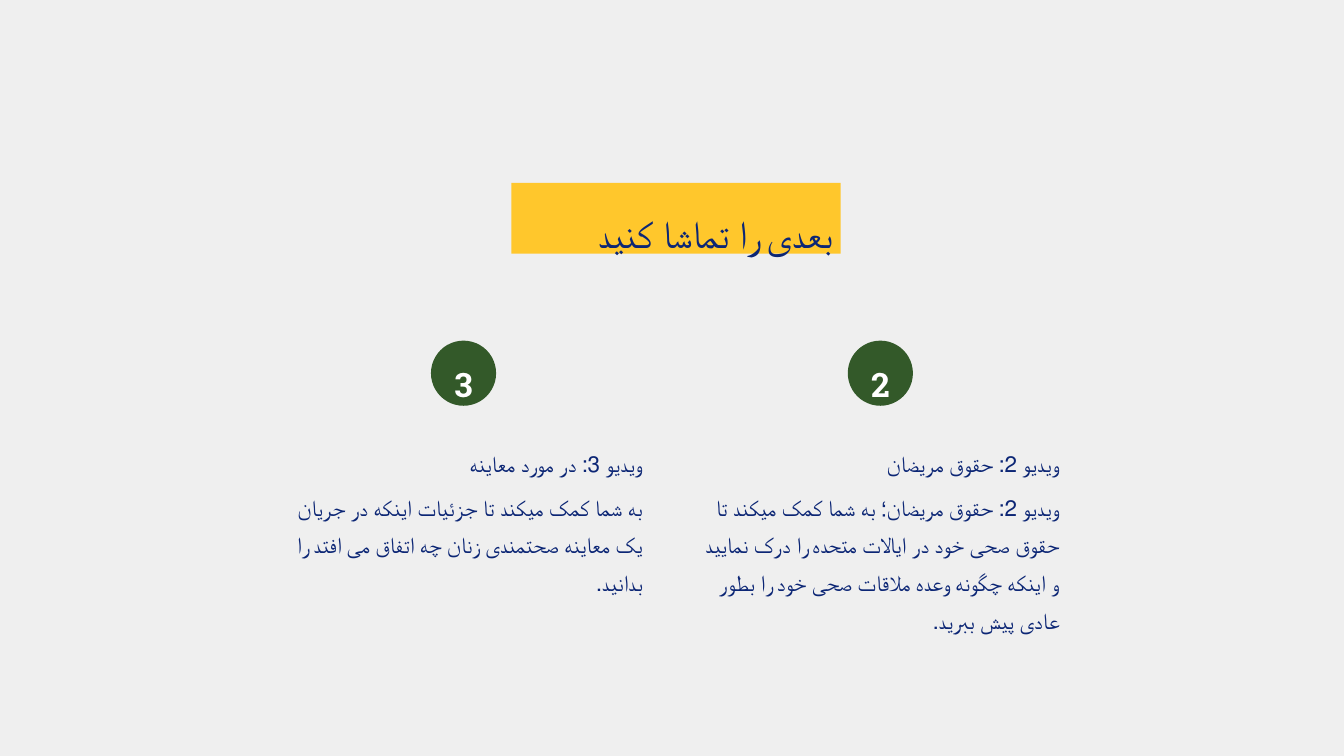
from pptx import Presentation
from pptx.dml.color import RGBColor
from pptx.enum.shapes import MSO_SHAPE
from pptx.enum.text import MSO_ANCHOR, MSO_AUTO_SIZE, PP_ALIGN
from pptx.util import Pt

RECTANGLE = MSO_SHAPE.RECTANGLE
OVAL = MSO_SHAPE.OVAL
TOP = MSO_ANCHOR.TOP
GROW = MSO_AUTO_SIZE.SHAPE_TO_FIT_TEXT
RIGHT = PP_ALIGN.RIGHT
CENTER = PP_ALIGN.CENTER

COLORS = {
    "background": "EFEFEF",
    "banner": "FFC72C",
    "text": "0C2675",
    "badge": "335929",
    "number": "FFFFFF",
}
TITLE_ONLY = 5
COLUMN_WIDTH = 384.5
BADGE_SIZE = 69.8
NUMBER_WIDTH = 24

VIDEOS = [
    (751, "2", "ویدیو 2: حقوق مریضان",
     "ویدیو 2: حقوق مریضان؛ به شما کمک میکند تا حقوق صحی خود در ایالات متحده را درک نمایید "
     "و اینکه چگونه وعده ملاقات صحی خود را بطور عادی پیش ببرید.", 151.2),
    (304.4, "3", "ویدیو 3: در مورد معاینه",
     "به شما کمک میکند تا جزئیات اینکه در جریان یک معاینه صحتمندی زنان چه اتفاق می افتد را بدانید.",
     110.2),
]


def color(name):
    return RGBColor.from_string(COLORS[name])


def place(shape, left, top, width, height):
    shape.left, shape.top = Pt(left), Pt(top)
    shape.width, shape.height = Pt(width), Pt(height)


def add_filled_shape(slide, kind, left, top, width, height, fill):
    shape = slide.shapes.add_shape(kind, Pt(left), Pt(top), Pt(width), Pt(height))
    shape.shadow.inherit = False
    shape.fill.solid()
    shape.fill.fore_color.rgb = color(fill)
    shape.line.fill.background()
    return shape


def write_text(shape, text, size, font="Calibri", fill="text", bold=False, rtl=True):
    frame = shape.text_frame
    frame.text = text
    frame.word_wrap = True
    frame.auto_size = GROW
    frame.vertical_anchor = TOP
    frame.margin_left = frame.margin_top = frame.margin_right = frame.margin_bottom = 0
    paragraph = frame.paragraphs[0]
    paragraph.line_spacing = 1.4
    paragraph.alignment = RIGHT if rtl else CENTER
    if rtl:
        paragraph._p.get_or_add_pPr().set("rtl", "1")
    run_font = paragraph.runs[0].font
    run_font.name = font
    run_font.size = Pt(size)
    run_font.bold = bold
    run_font.color.rgb = color(fill)


def add_text(slide, left, top, width, height, text, size, **style):
    box = slide.shapes.add_textbox(Pt(left), Pt(top), Pt(width), Pt(height))
    write_text(box, text, size, **style)


def add_title(slide, text):
    banner = add_filled_shape(slide, RECTANGLE, 548, 196, 352.8, 75.8, "banner")
    title = slide.shapes.title
    banner._element.addnext(title._element)
    place(title, 556.5, 205.2, 336.2, 49.7)
    write_text(title, text, 41)


def add_video(slide, left, number, heading, description, height):
    center = left + COLUMN_WIDTH / 2
    add_filled_shape(slide, OVAL, center - BADGE_SIZE / 2, 365, BADGE_SIZE, BADGE_SIZE, "badge")
    add_text(slide, center - NUMBER_WIDTH / 2, 372.2, NUMBER_WIDTH, 47.5, number, 36,
             font="Roboto Slab", fill="number", bold=True, rtl=False)
    add_text(slide, left, 471, COLUMN_WIDTH, 28.8, heading, 24)
    add_text(slide, left, 517.7, COLUMN_WIDTH, height, description, 24)


def main():
    presentation = Presentation()
    presentation.slide_width, presentation.slide_height = Pt(1440), Pt(810)
    slide = presentation.slides.add_slide(presentation.slide_layouts[TITLE_ONLY])
    slide.background.fill.solid()
    slide.background.fill.fore_color.rgb = color("background")
    add_title(slide, "بعدی را تماشا کنید")
    for video in VIDEOS:
        add_video(slide, *video)
    presentation.save("out.pptx")


if __name__ == "__main__":
    main()
